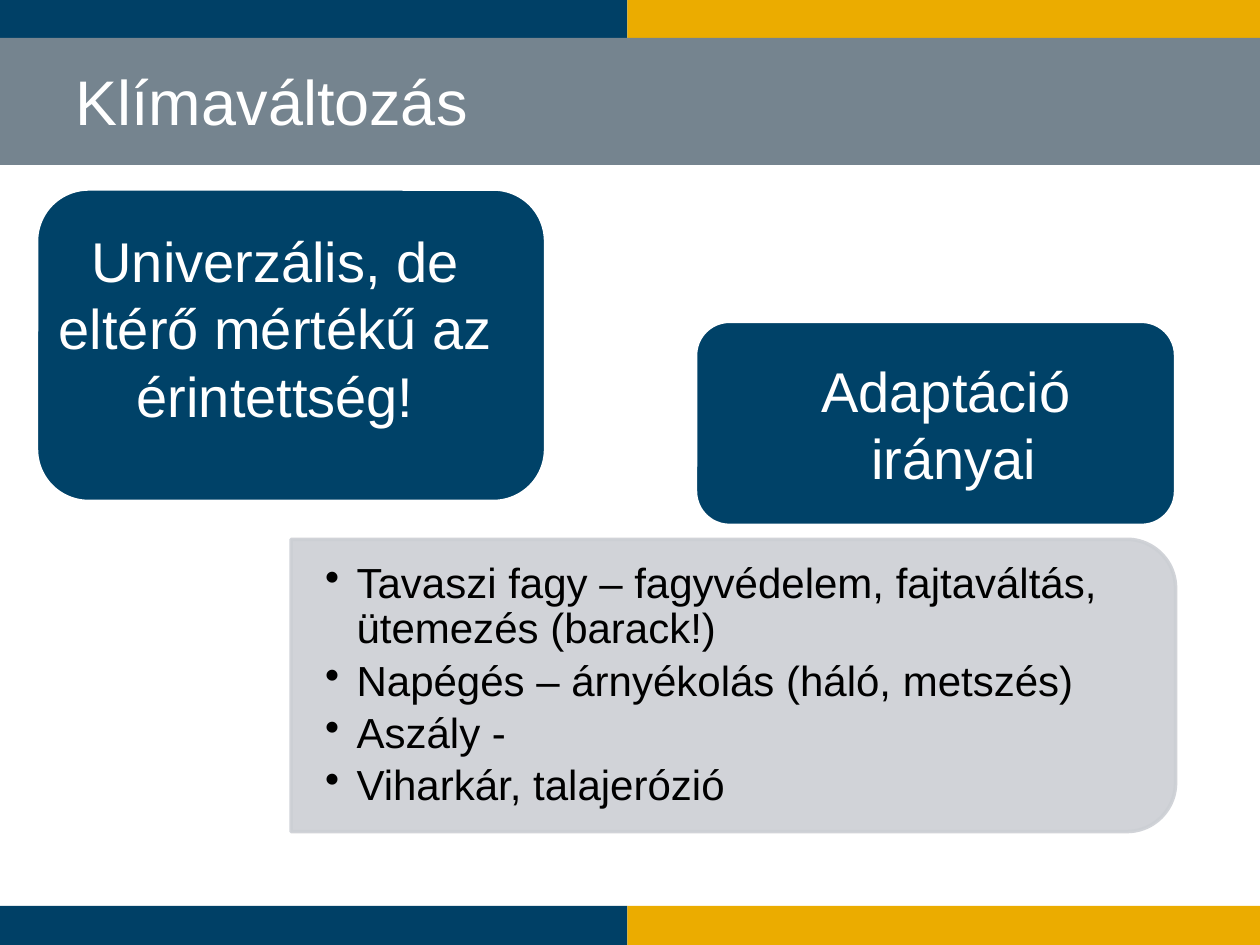
from lxml import etree
from pptx import Presentation
from pptx import util as u
from pptx.dml.color import RGBColor
from pptx.enum import shapes, text
from pptx.oxml.ns import qn

TITLE = "Klímaváltozás"
IMPACT = ["Univerzális, de eltérő mértékű az érintettség!"]
ADAPTATION = ["Adaptáció ", "irányai"]
MEASURES = [
    "Tavaszi fagy – fagyvédelem, fajtaváltás, ütemezés (barack!)",
    "Napégés – árnyékolás (háló, metszés)",
    "Aszály -",
    "Viharkár, talajerózió",
]

WIDTH, HEIGHT = 10, 7.5
STRIPE, SPLIT = 0.31, 4.98
BAND_TOP, BAND_HEIGHT = 0.3, 1.01
INDENT = 0.25

NAVY = RGBColor(0x00, 0x40, 0x66)
CARD = RGBColor(0x00, 0x42, 0x68)
GOLD = RGBColor(0xEB, 0xAC, 0x00)
SLATE = RGBColor(0x75, 0x84, 0x8F)
SILVER = RGBColor(0xCC, 0xCF, 0xD4)
WHITE = RGBColor(0xFF, 0xFF, 0xFF)
BLACK = RGBColor(0x00, 0x00, 0x00)

STRIPES = [
    (left, top, width, color)
    for top in (HEIGHT - STRIPE, 0)
    for left, width, color in ((0, SPLIT, NAVY), (SPLIT, WIDTH - SPLIT, GOLD))
]
CARDS = [
    ((0.29, 1.5, 4.04, 2.48), (0.29, 1.48, 3.79, 2.24), IMPACT),
    ((5.52, 2.55, 3.81, 1.62), (5.81, 2.93, 3.52, 0.87), ADAPTATION),
]
PANEL = (4.66, 1.93, 2.32, 7.02)
PANEL_TEXT = (2.31, 4.4, 6.91, 2.09)


def inches(box):
    return [u.Inches(value) for value in box]


def draw(slide, kind, box, color, edge=None):
    item = slide.shapes.add_shape(kind, *inches(box))
    item.shadow.inherit = False
    item.fill.solid()
    item.fill.fore_color.rgb = color
    if edge is None:
        item.line.fill.background()
    else:
        item.line.color.rgb = edge
        item.line.width = u.Pt(2)
    return item


def set_frame(frame, left, top, right, bottom):
    settings = {
        "margin_left": u.Inches(left),
        "margin_top": u.Inches(top),
        "margin_right": u.Inches(right),
        "margin_bottom": u.Inches(bottom),
        "word_wrap": True,
        "auto_size": text.MSO_AUTO_SIZE.NONE,
        "vertical_anchor": text.MSO_ANCHOR.MIDDLE,
    }
    for name, value in settings.items():
        setattr(frame, name, value)


def add_bullet(paragraph):
    props = paragraph._p.get_or_add_pPr()
    props.set("marL", str(u.Inches(INDENT)))
    props.set("indent", str(-u.Inches(INDENT)))
    etree.SubElement(props, qn("a:buChar")).set("char", "•")


def write(frame, lines, size, color, layout, bullets=False):
    for index, line in enumerate(lines):
        paragraph = frame.paragraphs[0] if index == 0 else frame.add_paragraph()
        if bullets:
            add_bullet(paragraph)
        for name, value in layout.items():
            setattr(paragraph, name, value)
        run = paragraph.add_run()
        run.text = line
        for name, value in {"name": "Arial", "size": u.Pt(size)}.items():
            setattr(run.font, name, value)
        run.font.color.rgb = color


def add_text(slide, box, margins, *content, **options):
    frame = slide.shapes.add_textbox(*inches(box)).text_frame
    set_frame(frame, *margins)
    write(frame, *content, **options)


def add_title(slide):
    title = slide.shapes.title
    places = zip(("left", "top", "width", "height"), inches((0.5, 0.41, 9, 0.67)))
    for name, value in places:
        setattr(title, name, value)
    set_frame(title.text_frame, 0.1, 0.1, 0.1, 0)
    write(title.text_frame, [TITLE], 36, WHITE, {"alignment": text.PP_ALIGN.LEFT})
    slide.shapes._spTree.append(title._element)


def add_panel(slide):
    panel = draw(slide, shapes.MSO_SHAPE.ROUND_2_SAME_RECTANGLE, PANEL, SILVER, SILVER)
    panel.rotation = 90
    for color in panel._element.spPr.iter(qn("a:srgbClr")):
        etree.SubElement(color, qn("a:alpha")).set("val", "90000")
    layout = {
        "alignment": text.PP_ALIGN.LEFT,
        "line_spacing": 0.9,
        "space_after": u.Pt(4),
    }
    add_text(slide, PANEL_TEXT, (0.27, 0.14, 0.27, 0.14),
             MEASURES, 24, BLACK, layout, bullets=True)


def main():
    deck = Presentation()
    deck.slide_width, deck.slide_height = inches((WIDTH, HEIGHT))
    slide = deck.slides.add_slide(deck.slide_layouts[5])

    for left, top, width, color in STRIPES:
        draw(slide, shapes.MSO_SHAPE.RECTANGLE, (left, top, width, STRIPE), color)
    draw(slide, shapes.MSO_SHAPE.RECTANGLE, (0, BAND_TOP, WIDTH, BAND_HEIGHT), SLATE)
    add_title(slide)

    add_panel(slide)
    for card, caption, lines in CARDS:
        draw(slide, shapes.MSO_SHAPE.ROUNDED_RECTANGLE, card, CARD, WHITE)
        add_text(slide, caption, (0.13, 0.07, 0.13, 0.07),
                 lines, 32, WHITE, {"alignment": text.PP_ALIGN.CENTER})
    deck.save("out.pptx")


if __name__ == "__main__":
    main()
